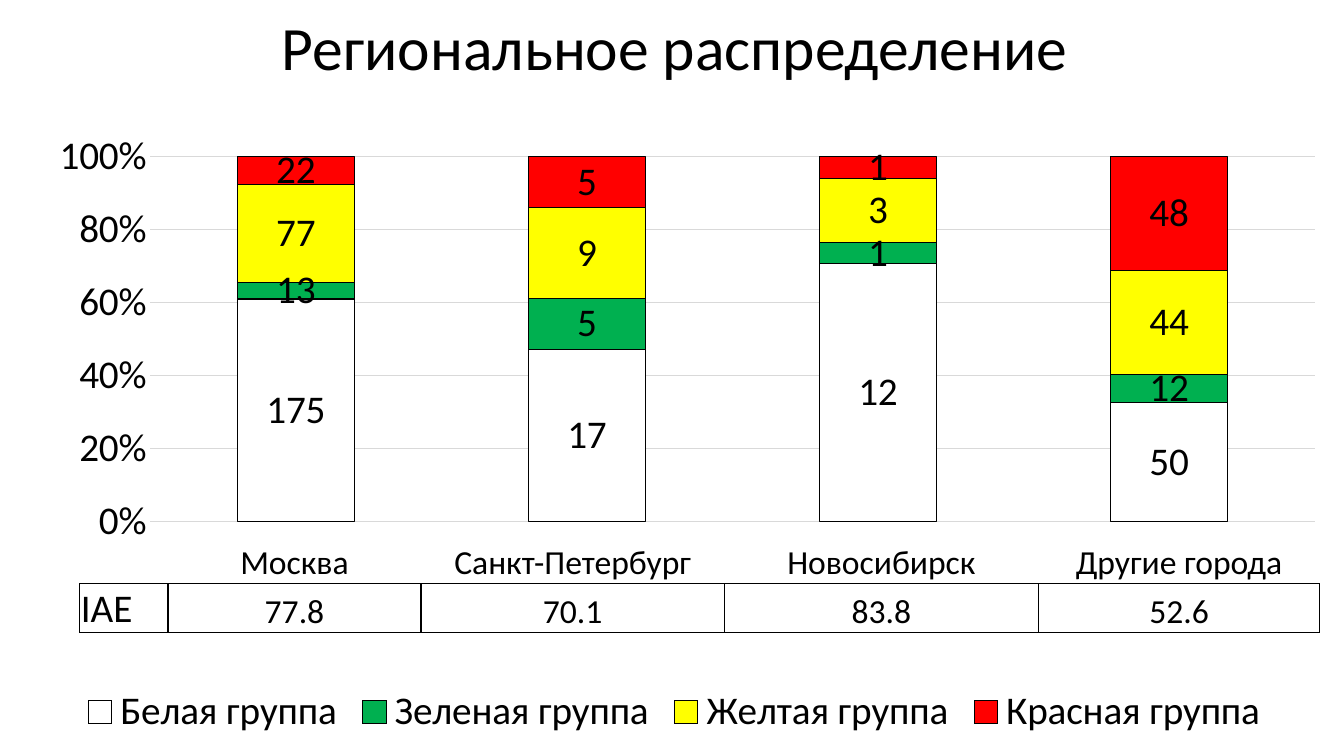
import pptx
import pptx.chart.data
import pptx.dml.color
import pptx.enum.chart
import pptx.enum.text
import pptx.oxml
import pptx.oxml.ns
import pptx.util

PX = 9525  # EMU per px, 96 px to the inch
FONT = "Calibri"
CENTER = pptx.enum.text.PP_ALIGN.CENTER
LEFT = pptx.enum.text.PP_ALIGN.LEFT


def rgb(color):
    return pptx.dml.color.RGBColor.from_string(color)


def write(tf, text, size, align=CENTER, anchor=None, spacing=None, color="000000"):
    """Put one formatted paragraph into a text frame."""
    if anchor is not None:
        tf.vertical_anchor = anchor
    p = tf.paragraphs[0]
    p.alignment = align
    p.line_spacing = spacing
    r = p.add_run()
    r.text = text
    r.font.name = FONT
    r.font.size = pptx.util.Pt(size)
    r.font.color.rgb = rgb(color)


prs = pptx.Presentation()
prs.slide_width, prs.slide_height = 1280 * PX, 720 * PX
s = prs.slides.add_slide(prs.slide_layouts[5])

# Title
title = s.shapes.title
title.left, title.top, title.width, title.height = 91 * PX, 0, 1104 * PX, 97 * PX
write(title.text_frame, "Региональное распределение", 44,
      anchor=pptx.enum.text.MSO_ANCHOR.MIDDLE, spacing=0.9)

# Chart
groups = [
    ("Белая группа", (175, 17, 12, 50), "FFFFFF"),
    ("Зеленая группа", (13, 5, 1, 12), "00B050"),
    ("Желтая группа", (77, 9, 3, 44), "FFFF00"),
    ("Красная группа", (22, 5, 1, 48), "FF0000"),
]
data = pptx.chart.data.CategoryChartData()
data.categories = ["1", "2", "3", "4"]
for name, values, _ in groups:
    data.add_series(name, values)
chart = s.shapes.add_chart(
    pptx.enum.chart.XL_CHART_TYPE.COLUMN_STACKED_100,
    17 * PX, 120 * PX, 1250 * PX, 588 * PX, data).chart
chart.has_title = False
chart.has_legend = True
chart.legend.position = pptx.enum.chart.XL_LEGEND_POSITION.BOTTOM
chart.legend.include_in_layout = False

plot = chart.plots[0]
plot.gap_width, plot.overlap = 150, 100
plot.vary_by_categories = False
plot.has_data_labels = True
plot.data_labels.show_value = True
for series, (_, _, color) in zip(plot.series, groups):
    series.invert_if_negative = False
    series.format.fill.solid()
    series.format.fill.fore_color.rgb = rgb(color)
    series.format.line.color.rgb = rgb("000000")
    series.format.line.width = pptx.util.Pt(0.75)

chart.category_axis.visible = False
axis = chart.value_axis
axis.major_tick_mark = axis.minor_tick_mark = pptx.enum.chart.XL_TICK_MARK.NONE
axis.tick_labels.number_format = "0%"
axis.tick_labels.number_format_is_linked = False
axis.format.line.fill.background()
axis.has_major_gridlines = True
grid = axis.major_gridlines.format.line
grid.color.rgb = rgb("D9D9D9")
grid.width = pptx.util.Pt(0.75)

for font in (chart.font, chart.legend.font, plot.data_labels.font, axis.tick_labels.font):
    font.name = FONT
    font.size = pptx.util.Pt(28)
    font.color.rgb = rgb("000000")

plot_area = chart.element.find(".//" + pptx.oxml.ns.qn("c:plotArea"))
for layout in plot_area.findall(pptx.oxml.ns.qn("c:layout")):
    plot_area.remove(layout)
plot_area.insert(0, pptx.oxml.parse_xml(
    f'<c:layout {pptx.oxml.ns.nsdecls("c")}><c:manualLayout>'
    '<c:layoutTarget val="inner"/><c:xMode val="edge"/><c:yMode val="edge"/>'
    '<c:x val="0.101"/><c:y val="0.05"/><c:w val="0.887"/><c:h val="0.59"/>'
    '</c:manualLayout></c:layout>'))

# City table under the columns
rows = [
    ("", "Москва", "Санкт-Петербург", "Новосибирск", "Другие города"),
    ("IAE", "77.8", "70.1", "83.8", "52.6"),
]
col_widths = (84, 241, 289, 299, 268)
row_heights = (39, 46)
table = s.shapes.add_table(2, 5, 76 * PX, 516 * PX,
                           sum(col_widths) * PX, sum(row_heights) * PX).table
table.first_row = table.horz_banding = False
for col, width in zip(table.columns, col_widths):
    col.width = width * PX
for row, height in zip(table.rows, row_heights):
    row.height = height * PX

for i, texts in enumerate(rows):
    for j, text in enumerate(texts):
        cell = table.cell(i, j)
        cell.margin_left = cell.margin_top = cell.margin_right = PX
        cell.margin_bottom = 0
        cell.vertical_anchor = pptx.enum.text.MSO_ANCHOR.BOTTOM
        if text:
            write(cell.text_frame, text, 24 if j else 28, align=CENTER if j else LEFT)
        tc_pr = cell._tc.get_or_add_tcPr()
        for side in "LRTB":
            color = "FFFFFF" if i == 0 and side != "B" else "000000"
            tc_pr.append(pptx.oxml.parse_xml(
                f'<a:ln{side} {pptx.oxml.ns.nsdecls("a")} w="12700"><a:solidFill>'
                f'<a:srgbClr val="{color}"/></a:solidFill></a:ln{side}>'))
        cell.fill.background()

prs.save("out.pptx")
